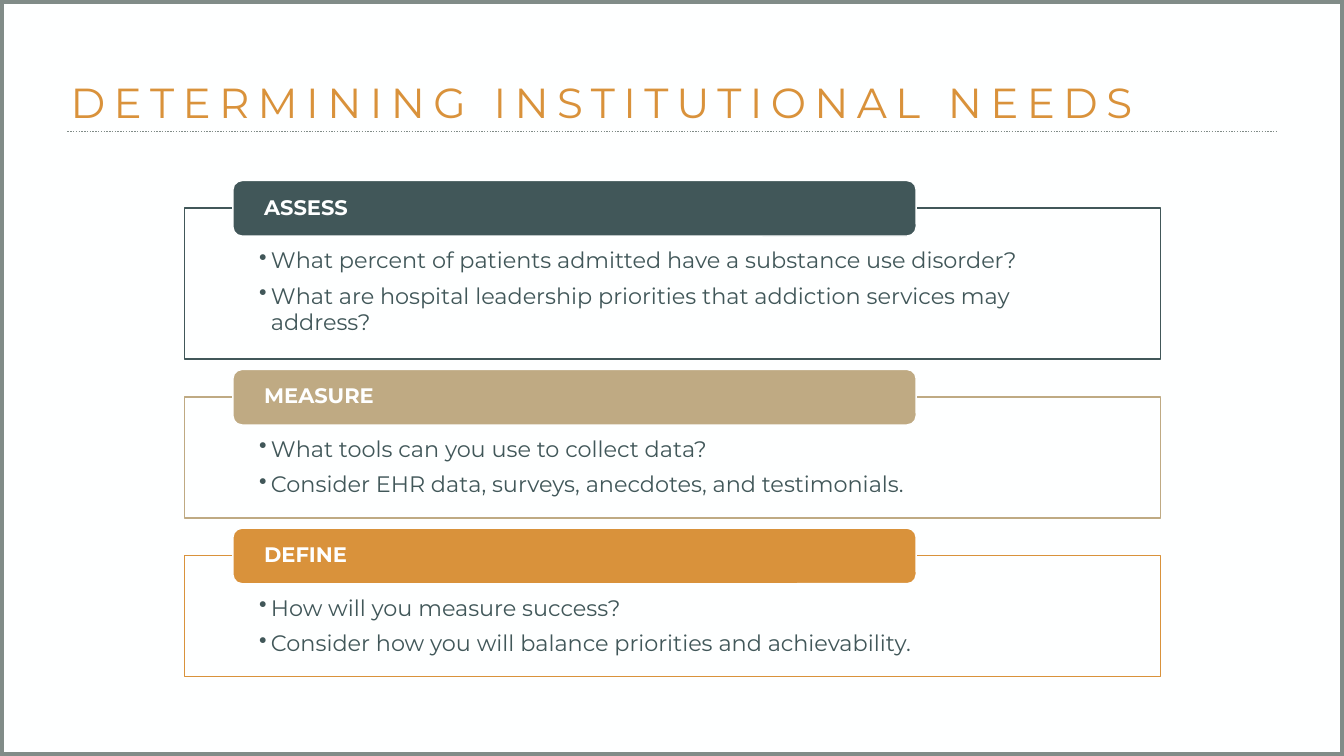
from dataclasses import dataclass

import pptx
import pptx.dml.color
import pptx.enum.dml
import pptx.enum.shapes
import pptx.enum.text
import pptx.oxml
import pptx.oxml.ns
import pptx.util
from pptx.util import Cm

SHAPE = pptx.enum.shapes.MSO_SHAPE
ANCHOR = pptx.enum.text.MSO_ANCHOR


@dataclass(frozen=True)
class Theme:
    font: str = "Montserrat"
    paper: str = "FEFFFF"
    frame: str = "818C88"
    slate: str = "415759"
    sand: str = "BFAA83"
    orange: str = "D9923B"
    title_size: int = 30
    body_size: int = 16
    tab_size: int = 15


@dataclass(frozen=True)
class Card:
    heading: str
    color: str
    height: float
    questions: tuple[str, ...]


THEME = Theme()
CARDS = (
    Card("ASSESS", THEME.slate, 3.81, (
        "What percent of patients admitted have a substance use disorder?",
        "What are hospital leadership priorities that addiction services may address?")),
    Card("MEASURE", THEME.sand, 3.05, (
        "What tools can you use to collect data?",
        "Consider EHR data, surveys, anecdotes, and testimonials.")),
    Card("DEFINE", THEME.orange, 3.05, (
        "How will you measure success?",
        "Consider how you will balance priorities and achievability.")),
)
CARDS_TOP = 4.55
CARD_GAP = 0.26
TAB_OVERLAP = 0.69  # how far a tab rises above its box


def rgb(color: str) -> pptx.dml.color.RGBColor:
    return pptx.dml.color.RGBColor.from_string(color)


def format_frame(tf, *, anchor, left: float, top: float, right: float, bottom: float) -> None:
    tf.word_wrap = True
    tf.auto_size = pptx.enum.text.MSO_AUTO_SIZE.NONE
    tf.vertical_anchor = anchor
    tf.margin_left, tf.margin_top = Cm(left), Cm(top)
    tf.margin_right, tf.margin_bottom = Cm(right), Cm(bottom)


def write(p, text: str, *, size: int, color: str, bold: bool = False, tracking: int = 0,
          line_spacing: float = 1.0, before: int = 0, bullet: bool = False) -> None:
    """Fill a paragraph with one formatted run; tracking is in points."""
    p.alignment = pptx.enum.text.PP_ALIGN.LEFT
    p.line_spacing = line_spacing
    p.space_before = pptx.util.Pt(before)
    if bullet:
        pPr = p._p.get_or_add_pPr()
        pPr.set("marL", str(Cm(0.3)))
        pPr.set("indent", str(-Cm(0.3)))
        pPr.append(pptx.oxml.parse_xml(
            f'<a:buChar {pptx.oxml.ns.nsdecls("a")} char="•"/>'))
    r = p.add_run()
    r.text = text
    r.font.name = THEME.font
    r.font.size = pptx.util.Pt(size)
    r.font.bold = bold
    r.font.color.rgb = rgb(color)
    if tracking:
        r._r.get_or_add_rPr().set("spc", str(tracking * 100))


def add_panel(s, kind, left: float, top: float, width: float, height: float, *,
              line: str, weight: float = 1, fill: str | None = None):
    sp = s.shapes.add_shape(kind, Cm(left), Cm(top), Cm(width), Cm(height))
    sp.shadow.inherit = False
    if fill:
        sp.fill.solid()
        sp.fill.fore_color.rgb = rgb(fill)
    else:
        sp.fill.background()
    sp.line.color.rgb = rgb(line)
    sp.line.width = pptx.util.Pt(weight)
    return sp


def add_rule(s) -> None:
    """Dotted line under the title."""
    rule = s.shapes.add_connector(pptx.enum.shapes.MSO_CONNECTOR.STRAIGHT,
                                  Cm(1.7), Cm(3.32), Cm(32.16), Cm(3.32))
    rule.line.color.rgb = rgb(THEME.frame)
    rule.line.width = pptx.util.Pt(1)
    rule.line.dash_style = pptx.enum.dml.MSO_LINE.ROUND_DOT
    rule._element.spPr.append(pptx.oxml.parse_xml(
        f'<a:effectLst {pptx.oxml.ns.nsdecls("a")}/>'))


def add_title(s, text: str) -> None:
    title = s.shapes.title
    title.left, title.top, title.width, title.height = Cm(1.7), Cm(1.5), Cm(30.48), Cm(1.8)
    format_frame(title.text_frame, anchor=ANCHOR.BOTTOM,
                 left=0.08, top=0.08, right=0.08, bottom=0.08)
    write(title.text_frame.paragraphs[0], text, size=THEME.title_size,
          color=THEME.orange, tracking=6, line_spacing=0.9)


def add_card(s, card: Card, top: float) -> None:
    box = add_panel(s, SHAPE.RECTANGLE, 4.65, top + TAB_OVERLAP, 24.59, card.height,
                    line=card.color, fill=THEME.paper)
    tf = box.text_frame
    format_frame(tf, anchor=ANCHOR.TOP, left=1.88, top=0.97, right=1.88, bottom=0.3)
    for i, question in enumerate(card.questions):
        p = tf.add_paragraph() if i else tf.paragraphs[0]
        write(p, question, size=THEME.body_size, color=THEME.slate, before=6, bullet=True)

    tab = add_panel(s, SHAPE.ROUNDED_RECTANGLE, 5.87, top, 17.22, 1.4,
                    line=THEME.paper, fill=card.color)
    format_frame(tab.text_frame, anchor=ANCHOR.MIDDLE, left=0.72, top=0, right=0.72, bottom=0)
    write(tab.text_frame.paragraphs[0], card.heading, size=THEME.tab_size,
          color=THEME.paper, bold=True, line_spacing=0.9, before=6)


def main() -> None:
    prs = pptx.Presentation()
    prs.slide_width, prs.slide_height = Cm(33.87), Cm(19.05)
    s = prs.slides.add_slide(prs.slide_layouts.get_by_name("Title Only"))
    s.background.fill.solid()
    s.background.fill.fore_color.rgb = rgb(THEME.paper)

    add_panel(s, SHAPE.RECTANGLE, 0, 0, 33.87, 19.05, line=THEME.frame, weight=6)
    add_rule(s)
    add_title(s, "DETERMINING INSTITUTIONAL NEEDS")
    top = CARDS_TOP
    for card in CARDS:
        add_card(s, card, top)
        top += TAB_OVERLAP + card.height + CARD_GAP
    prs.save("out.pptx")


if __name__ == "__main__":
    main()
